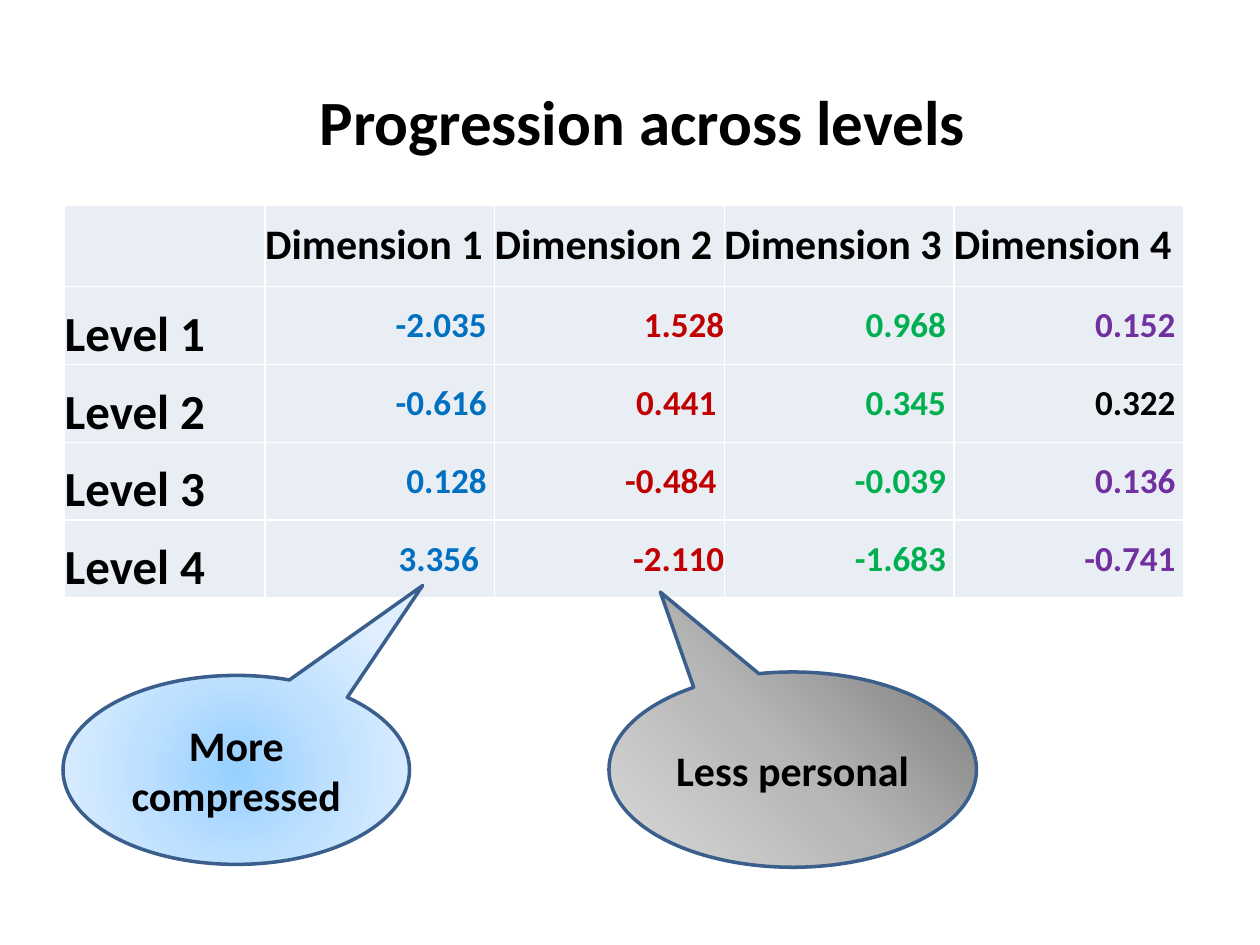
from dataclasses import dataclass

from lxml import etree
from pptx import Presentation
from pptx.dml.color import RGBColor
from pptx.enum.shapes import MSO_SHAPE
from pptx.enum.text import MSO_ANCHOR, PP_ALIGN
from pptx.oxml import parse_xml
from pptx.oxml.ns import qn
from pptx.util import Pt

CALLOUT = MSO_SHAPE.OVAL_CALLOUT
MIDDLE, BOTTOM = MSO_ANCHOR.MIDDLE, MSO_ANCHOR.BOTTOM
LEFT, CENTER, RIGHT = PP_ALIGN.LEFT, PP_ALIGN.CENTER, PP_ALIGN.RIGHT
DRAWING_NS = "http://schemas.openxmlformats.org/drawingml/2006/main"
TITLE_ONLY = 5


@dataclass(frozen=True)
class Theme:
    font: str = "Calibri"
    text: str = "000000"
    cell: str = "E9EDF4"
    border: str = "FFFFFF"
    outline: str = "3A5F8C"
    dimensions: tuple = ("0070C0", "C00000", "00B050", "7030A0")
    blues: tuple = ("96D0FF", "BFE1FF", "E0EFFF")
    greys: tuple = ("808080", "B7B7B7", "D9D9D9")
    title_size: int = 36
    level_size: int = 28
    label_size: int = 24
    value_size: int = 20
    value_gap: float = 4.5


THEME = Theme()
RADIAL = ('<a:path path="circle"><a:fillToRect l="50000" t="50000" '
          'r="50000" b="50000"/></a:path>')
DIAGONAL = '<a:lin ang="8100000" scaled="0"/>'

LEVELS = [
    ("Level 1", ["-2.035", "1.528", "0.968", "0.152"]),
    ("Level 2", ["-0.616", "0.441", "0.345", "0.322"]),
    ("Level 3", ["0.128", "-0.484", "-0.039", "0.136"]),
    ("Level 4", ["3.356", "-2.110", "-1.683", "-0.741"]),
]
NEUTRAL_VALUES = {"0.322"}
GAP_FACTORS = {"1.528": 0, "-2.110": 0, "3.356": 2}


class SlideBuilder:
    def __init__(self, page, theme):
        self.page = page
        self.theme = theme

    def set_text(self, frame, text, size, color=None, align=LEFT):
        frame.text = text
        frame.word_wrap = True
        for para in frame.paragraphs:
            para.alignment = align
            for span in para.runs:
                span.font.name = self.theme.font
                span.font.size = Pt(size)
                span.font.bold = True
                span.font.color.rgb = RGBColor.from_string(color or self.theme.text)

    def title(self, text, left, top, width, height):
        box = self.page.shapes.title
        box.left, box.top, box.width, box.height = map(Pt, (left, top, width, height))
        box.text_frame.vertical_anchor = MIDDLE
        self.set_text(box.text_frame, text, self.theme.title_size, align=CENTER)

    def style_cell(self, cell, anchor=MIDDLE, right_gap=0):
        cell.margin_left = cell.margin_top = cell.margin_bottom = 0
        cell.margin_right = Pt(right_gap)
        cell.vertical_anchor = anchor
        cell.fill.solid()
        cell.fill.fore_color.rgb = RGBColor.from_string(self.theme.cell)
        properties = cell._tc.get_or_add_tcPr()
        for position, side in enumerate(("lnL", "lnR", "lnT", "lnB")):
            line = etree.Element(qn(f"a:{side}"), w=str(Pt(1)))
            solid = etree.SubElement(line, qn("a:solidFill"))
            etree.SubElement(solid, qn("a:srgbClr"), val=self.theme.border)
            properties.insert(position, line)

    def level_table(self, levels, left, top, column_widths, row_heights):
        frame = self.page.shapes.add_table(
            len(row_heights), len(column_widths), Pt(left), Pt(top),
            Pt(sum(column_widths)), Pt(sum(row_heights)))
        table = frame.table
        table.first_row = table.horz_banding = False
        for column, width in zip(table.columns, column_widths):
            column.width = Pt(width)
        for row, height in zip(table.rows, row_heights):
            row.height = Pt(height)

        theme = self.theme
        self.style_cell(table.cell(0, 0))
        for number in range(1, len(column_widths)):
            header = table.cell(0, number)
            self.style_cell(header)
            self.set_text(header.text_frame, f"Dimension {number}", theme.label_size)
        for row, (level, values) in enumerate(levels, start=1):
            name = table.cell(row, 0)
            self.style_cell(name, BOTTOM)
            self.set_text(name.text_frame, level, theme.level_size)
            for column, value in enumerate(values, start=1):
                cell = table.cell(row, column)
                neutral = value in NEUTRAL_VALUES
                color = theme.text if neutral else theme.dimensions[column - 1]
                gap = theme.value_gap * GAP_FACTORS.get(value, 1)
                self.style_cell(cell, right_gap=gap)
                self.set_text(cell.text_frame, value, theme.value_size, color, RIGHT)

    def callout(self, text, left, top, width, height, tip, colors, direction):
        """Draw an oval callout; tip is its offset from the centre, in box sizes."""
        shape = self.page.shapes.add_shape(
            CALLOUT, Pt(left), Pt(top), Pt(width), Pt(height))
        shape.adjustments[0], shape.adjustments[1] = tip
        shape.shadow.inherit = False
        shape.line.color.rgb = RGBColor.from_string(self.theme.outline)
        shape.line.width = Pt(2)
        self.gradient(shape, colors, direction)
        shape.text_frame.vertical_anchor = MIDDLE
        self.set_text(shape.text_frame, text, self.theme.label_size, align=CENTER)

    def gradient(self, shape, colors, direction):
        shape.fill.solid()
        stops = "".join(
            f'<a:gs pos="{index * 50000}"><a:srgbClr val="{color}"/></a:gs>'
            for index, color in enumerate(colors))
        fill = parse_xml(f'<a:gradFill xmlns:a="{DRAWING_NS}" rotWithShape="1">'
                         f"<a:gsLst>{stops}</a:gsLst>{direction}</a:gradFill>")
        properties = shape._element.spPr
        properties.replace(properties.find(qn("a:solidFill")), fill)


def main():
    deck = Presentation()
    deck.slide_width, deck.slide_height = Pt(720), Pt(540)
    page = deck.slides.add_slide(deck.slide_layouts[TITLE_ONLY])
    builder = SlideBuilder(page, THEME)
    builder.title("Progression across levels", 14.4, 43.2, 705.6, 51)
    builder.level_table(LEVELS, 37, 117, [114.5] + [131.2] * 4, [46.8] + [44.5] * 4)
    builder.callout("More compressed", 36, 386, 198, 108,
                    (0.538, -0.976), THEME.blues, RADIAL)
    builder.callout("Less personal", 348, 384, 210, 111.6,
                    (-0.36, -0.909), THEME.greys, DIAGONAL)
    deck.save("out.pptx")


if __name__ == "__main__":
    main()
